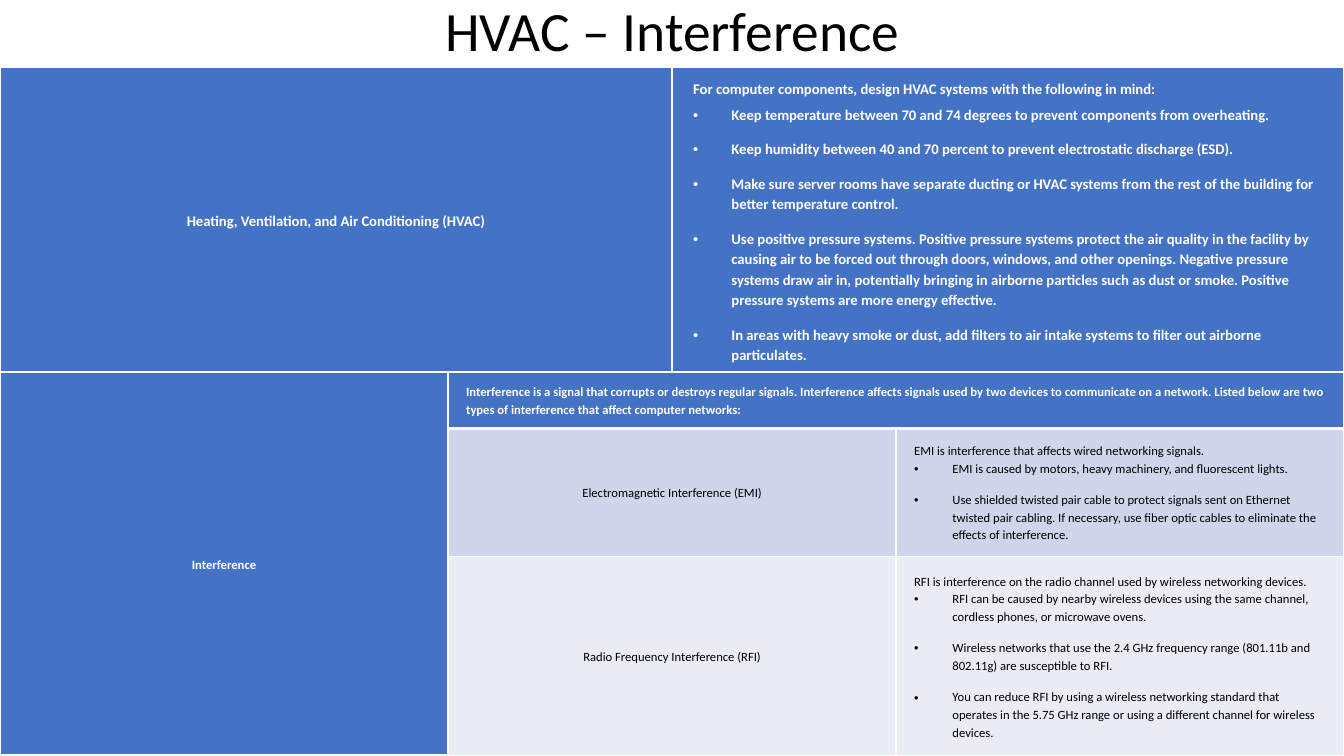
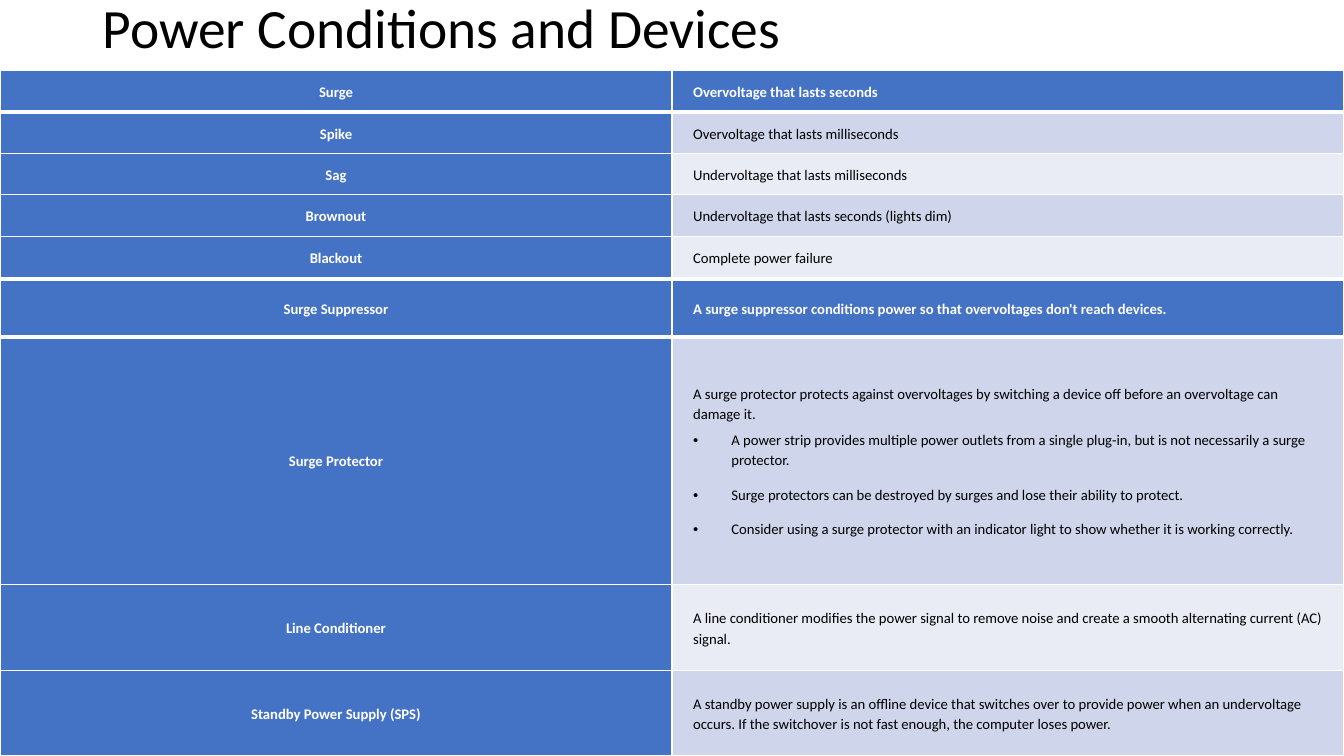
from lxml import etree
from pptx import Presentation
from pptx import util as u
from pptx.dml.color import RGBColor
from pptx.enum import text
from pptx.oxml import ns

WIDTH, HEIGHT = 13.33, 7.5
FONT = "Calibri"
BLACK = RGBColor(0x00, 0x00, 0x00)
WHITE = RGBColor(0xFF, 0xFF, 0xFF)
BLUE = RGBColor(0x44, 0x72, 0xC4)
BANDS = (RGBColor(0xCF, 0xD5, 0xEA), RGBColor(0xE9, 0xEB, 0xF5))
CENTER, LEFT = text.PP_ALIGN.CENTER, text.PP_ALIGN.LEFT
MIDDLE = text.MSO_ANCHOR.MIDDLE
BULLET_INDENT = u.Inches(0.38)

# A cell is a string, or a tuple of a lead sentence and its bullets.
HVAC = [
    ("Heating, Ventilation, and Air Conditioning (HVAC)",
     ("For computer components, design HVAC systems with the following in mind:",
      "Keep temperature between 70 and 74 degrees to prevent components from overheating.",
      "Keep humidity between 40 and 70 percent to prevent electrostatic discharge (ESD).",
      "Make sure server rooms have separate ducting or HVAC systems from the rest of the "
      "building for better temperature control.",
      "Use positive pressure systems. Positive pressure systems protect the air quality in "
      "the facility by causing air to be forced out through doors, windows, and other "
      "openings. Negative pressure systems draw air in, potentially bringing in airborne "
      "particles such as dust or smoke. Positive pressure systems are more energy effective.",
      "In areas with heavy smoke or dust, add filters to air intake systems to filter out "
      "airborne particulates.")),
]
# None continues the cell above; a short row widens its last cell.
INTERFERENCE = [
    ("Interference",
     "Interference is a signal that corrupts or destroys regular signals. Interference "
     "affects signals used by two devices to communicate on a network. Listed below are two "
     "types of interference that affect computer networks:"),
    (None, "Electromagnetic Interference (EMI)",
     ("EMI is interference that affects wired networking signals.",
      "EMI is caused by motors, heavy machinery, and fluorescent lights.",
      "Use shielded twisted pair cable to protect signals sent on Ethernet twisted pair "
      "cabling. If necessary, use fiber optic cables to eliminate the effects of "
      "interference.")),
    (None, "Radio Frequency Interference (RFI)",
     ("RFI is interference on the radio channel used by wireless networking devices.",
      "RFI can be caused by nearby wireless devices using the same channel, cordless phones, "
      "or microwave ovens.",
      "Wireless networks that use the 2.4 GHz frequency range (801.11b and 802.11g) are "
      "susceptible to RFI.",
      "You can reduce RFI by using a wireless networking standard that operates in the "
      "5.75 GHz range or using a different channel for wireless devices.")),
]
CONDITIONS = [
    ("Surge", "Overvoltage that lasts seconds"),
    ("Spike", "Overvoltage that lasts milliseconds"),
    ("Sag", "Undervoltage that lasts milliseconds"),
    ("Brownout", "Undervoltage that lasts seconds (lights dim)"),
    ("Blackout", "Complete power failure"),
]
DEVICES = [
    ("Surge Suppressor",
     "A surge suppressor conditions power so that overvoltages don't reach devices."),
    ("Surge Protector",
     ("A surge protector protects against overvoltages by switching a device off before an "
      "overvoltage can damage it.",
      "A power strip provides multiple power outlets from a single plug-in, but is not "
      "necessarily a surge protector.",
      "Surge protectors can be destroyed by surges and lose their ability to protect.",
      "Consider using a surge protector with an indicator light to show whether it is "
      "working correctly.")),
    ("Line Conditioner",
     "A line conditioner modifies the power signal to remove noise and create a smooth "
     "alternating current (AC) signal."),
    ("Standby Power Supply (SPS)",
     "A standby power supply is an offline device that switches over to provide power when "
     "an undervoltage occurs. If the switchover is not fast enough, the computer loses "
     "power."),
]


def apply(target, **values):
    for key, value in values.items():
        setattr(target, key, value)


def write(paragraph, words, size, color, bold=False, **layout):
    run = paragraph.add_run()
    run.text = words
    apply(run.font, name=FONT, size=u.Pt(size), bold=bold)
    run.font.color.rgb = color
    apply(paragraph, **layout)


def add_bullet(paragraph):
    props = paragraph._p.get_or_add_pPr()
    props.set("marL", str(BULLET_INDENT))
    props.set("indent", str(-BULLET_INDENT))
    etree.SubElement(props, ns.qn("a:buFont")).set("typeface", "Arial")
    etree.SubElement(props, ns.qn("a:buChar")).set("char", "•")


def add_borders(cell, bottom):
    props = cell._tc.get_or_add_tcPr()
    widths = {"a:lnL": 1, "a:lnR": 1, "a:lnT": 1, "a:lnB": bottom}
    for place, (side, width) in enumerate(widths.items()):
        line = etree.Element(ns.qn(side), w=str(u.Pt(width)))
        fill = etree.SubElement(line, ns.qn("a:solidFill"))
        etree.SubElement(fill, ns.qn("a:srgbClr")).set("val", str(WHITE))
        props.insert(place, line)


def add_title(slide, words, height, align):
    """Title band across the top of the slide."""
    box = slide.shapes.add_textbox(
        *map(u.Inches, (0.92, 0, 11.5, height)))
    apply(box.text_frame, word_wrap=True, vertical_anchor=MIDDLE,
          margin_top=0, margin_bottom=0)
    write(box.text_frame.paragraphs[0], words, 39.6, BLACK,
          alignment=align, line_spacing=0.9)


def fill_cell(cell, content, size, color, bold, is_label, gap):
    """Centred label, or a lead sentence followed by bullets."""
    side = size * 0.02
    edge = 0.05 if is_label else side / 2
    apply(cell, vertical_anchor=MIDDLE,
          margin_left=u.Inches(side), margin_right=u.Inches(side),
          margin_top=u.Inches(edge), margin_bottom=u.Inches(edge))
    lead, *bullets = (content,) if isinstance(content, str) else content
    frame = cell.text_frame
    write(frame.paragraphs[0], lead, size, color, bold,
          alignment=CENTER if is_label else LEFT, line_spacing=1.15,
          space_before=u.Pt(gap), space_after=u.Pt(gap))
    for words in bullets:
        item = frame.add_paragraph()
        write(item, words, size, color, bold, alignment=LEFT, line_spacing=1.15,
              space_before=u.Pt(0), space_after=u.Pt(10))
        add_bullet(item)


def add_grid(slide, top, height, rows, shares, gaps, size=10.5):
    """Full-width table with equal columns; row heights follow their shares."""
    columns = max(map(len, rows))
    table = slide.shapes.add_table(
        len(rows), columns, *map(u.Inches, (0, top, WIDTH, height))).table
    apply(table, first_row=False, horz_banding=False)
    for row, share in zip(table.rows, shares):
        row.height = u.Inches(height * share / sum(shares))

    for r, (row, gap) in enumerate(zip(rows, gaps)):
        for c in range(columns):
            cell = table.cell(r, c)
            strong = r == 0 or c == 0
            cell.fill.solid()
            cell.fill.fore_color.rgb = BLUE if strong else BANDS[(r - 1) % 2]
            add_borders(cell, bottom=3 if r == 0 else 1)
            if c < len(row) and row[c] is not None:
                fill_cell(cell, row[c], size, WHITE if strong else BLACK, strong,
                          c < len(row) - 1, gap)
        if len(row) < columns:
            table.cell(r, len(row) - 1).merge(table.cell(r, columns - 1))
    if rows[-1][0] is None:
        table.cell(0, 0).merge(table.cell(len(rows) - 1, 0))


def build_interference(slide):
    add_title(slide, "HVAC – Interference", 0.66, CENTER)
    add_grid(slide, 0.67, 3.02, HVAC, [1], [3.8])
    add_grid(slide, 3.69, 3.81, INTERFERENCE, [0.56, 1.27, 1.98], [0] * 3, size=9)


def build_power(slide):
    add_title(slide, "Power Conditions and Devices", 0.6, LEFT)
    add_grid(slide, 0.7, 2.05, CONDITIONS, [1] * 5, [3.8] * 5)
    add_grid(slide, 2.78, 4.72, DEVICES, [0.56, 2.46, 0.85, 0.85], [3.8, 3.8, 0, 0])


def main():
    deck = Presentation()
    apply(deck, slide_width=u.Inches(WIDTH), slide_height=u.Inches(HEIGHT))
    for build in (build_interference, build_power):
        build(deck.slides.add_slide(deck.slide_layouts[6]))
    deck.save("out.pptx")


if __name__ == "__main__":
    main()
